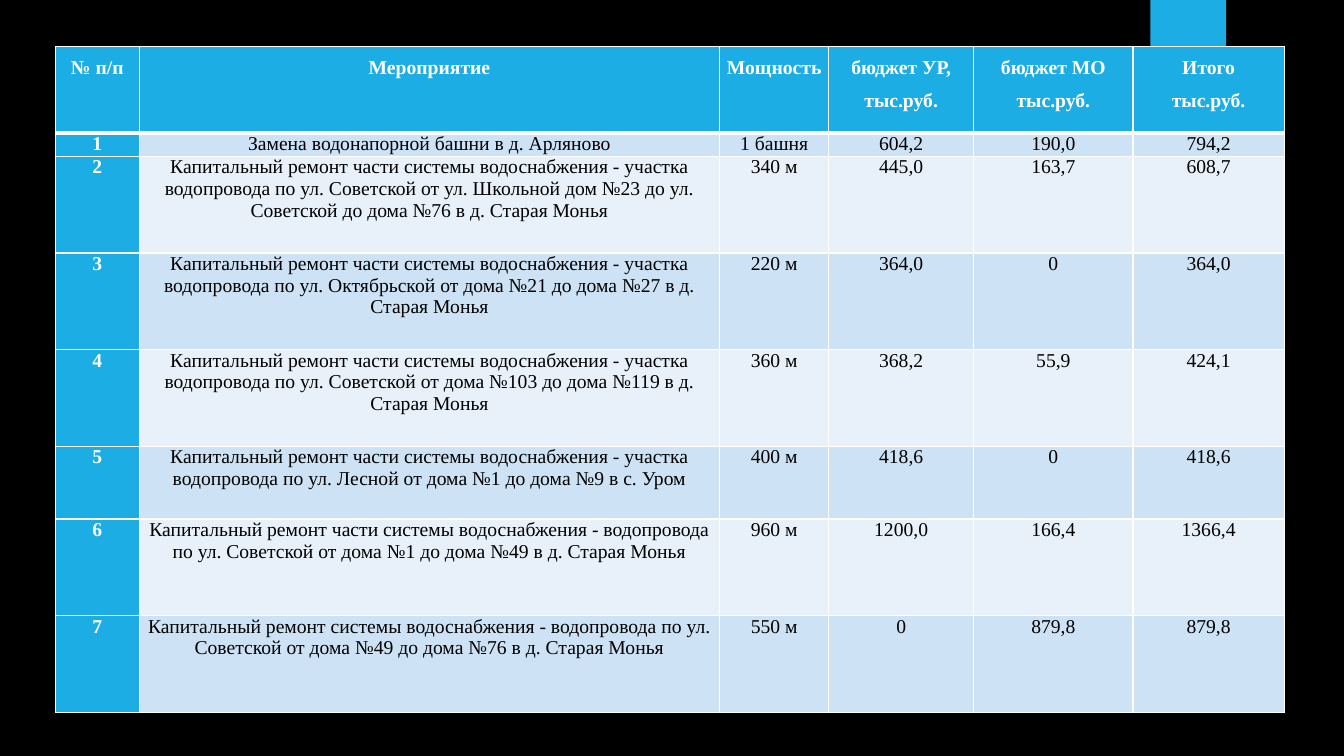
from lxml.etree import SubElement
from pptx import Presentation
from pptx.dml.color import RGBColor
from pptx.enum.shapes import MSO_SHAPE as Shape
from pptx.enum.text import PP_ALIGN as Align
from pptx.oxml.ns import qn
from pptx.util import Inches, Pt

WIDTH, HEIGHT = Inches(13.33), Inches(7.5)
FONT = "Times New Roman"
BLUE, WHITE, BLACK = "1CADE4", "FFFFFF", "000000"
BANDS = ["E8F1FA", "CDE3F5"]

COLUMN_SHARES = [6.23, 43.2, 8.1, 10.8, 11.85, 11.25]
ROW_SHARES = [11.47, 3.07, 12.8, 12.8, 12.8, 9.6, 12.8, 12.8]

HEADER = ["№ п/п", "Мероприятие", "Мощность", "бюджет УР, тыс.руб.",
          "бюджет МО\nтыс.руб.", "Итого\nтыс.руб."]
PART = "Капитальный ремонт части системы водоснабжения - "
WORKS = [
    ["Замена водонапорной башни в д. Арляново", "1 башня", "604,2", "190,0", "794,2"],
    [PART + "участка водопровода по ул. Советской от ул. Школьной дом №23 "
     "до ул. Советской до дома №76 в д. Старая Монья", "340 м", "445,0", "163,7", "608,7"],
    [PART + "участка водопровода по ул. Октябрьской от дома №21 до дома №27 "
     "в д. Старая Монья", "220 м", "364,0", "0", "364,0"],
    [PART + "участка водопровода по ул. Советской от дома №103 до дома №119 "
     "в д. Старая Монья", "360 м", "368,2", "55,9", "424,1"],
    [PART + "участка водопровода по ул. Лесной от дома №1 до дома №9 в с. Уром",
     "400 м", "418,6", "0", "418,6"],
    [PART + "водопровода по ул. Советской от дома №1 до дома №49 в д. Старая Монья",
     "960 м", "1200,0", "166,4", "1366,4"],
    ["Капитальный ремонт системы водоснабжения - водопровода по ул. Советской "
     "от дома №49 до дома №76 в д. Старая Монья", "550 м", "0", "879,8", "879,8"],
]


def across(percent):
    return round(WIDTH * percent / 100)


def down(percent):
    return round(HEIGHT * percent / 100)


def paint(fill, color):
    fill.solid()
    fill.fore_color.rgb = RGBColor.from_string(color)


def add_tab(page):
    tab = page.shapes.add_shape(
        Shape.RECTANGLE, across(85.6), 0, across(5.63), down(16.67))
    tab.shadow.inherit = False
    tab.line.fill.background()
    paint(tab.fill, BLUE)


def set_borders(cell, top, bottom):
    properties = cell._tc.get_or_add_tcPr()
    for side, points in (("L", 1), ("R", 1), ("T", top), ("B", bottom)):
        line = SubElement(properties, qn(f"a:ln{side}"), w=str(Pt(points)))
        fill = SubElement(line, qn("a:solidFill"))
        SubElement(fill, qn("a:srgbClr"), val=WHITE)


def fill_cell(cell, text, row, column):
    is_header = row == 0
    is_label = is_header or column == 0
    set_borders(cell, 3 if row == 1 else 1, 3 if is_header else 1)
    paint(cell.fill, BLUE if is_label else BANDS[row % 2])
    cell.margin_left = cell.margin_right = Inches(0.06)
    cell.margin_top = cell.margin_bottom = 0
    cell.text_frame.text = text
    for para in cell.text_frame.paragraphs:
        para.alignment = Align.CENTER
        para.line_spacing = 1.5 if is_header else 1.0
        for span in para.runs:
            span.font.name = FONT
            span.font.size = Pt(14)
            span.font.bold = is_label
            span.font.color.rgb = RGBColor.from_string(WHITE if is_label else BLACK)


def add_works_table(page):
    rows = [HEADER] + [[str(number), *work] for number, work in enumerate(WORKS, 1)]
    table = page.shapes.add_table(
        len(rows), len(HEADER), across(4.13), down(6.13),
        across(sum(COLUMN_SHARES)), down(sum(ROW_SHARES))).table
    for column, share in zip(table.columns, COLUMN_SHARES):
        column.width = across(share)
    for row, share in zip(table.rows, ROW_SHARES):
        row.height = down(share)
    for row, texts in enumerate(rows):
        for column, text in enumerate(texts):
            fill_cell(table.cell(row, column), text, row, column)


def main():
    deck = Presentation()
    deck.slide_width, deck.slide_height = WIDTH, HEIGHT
    page = deck.slides.add_slide(deck.slide_layouts[6])
    paint(page.background.fill, BLACK)
    add_tab(page)
    add_works_table(page)
    deck.save("out.pptx")


if __name__ == "__main__":
    main()
